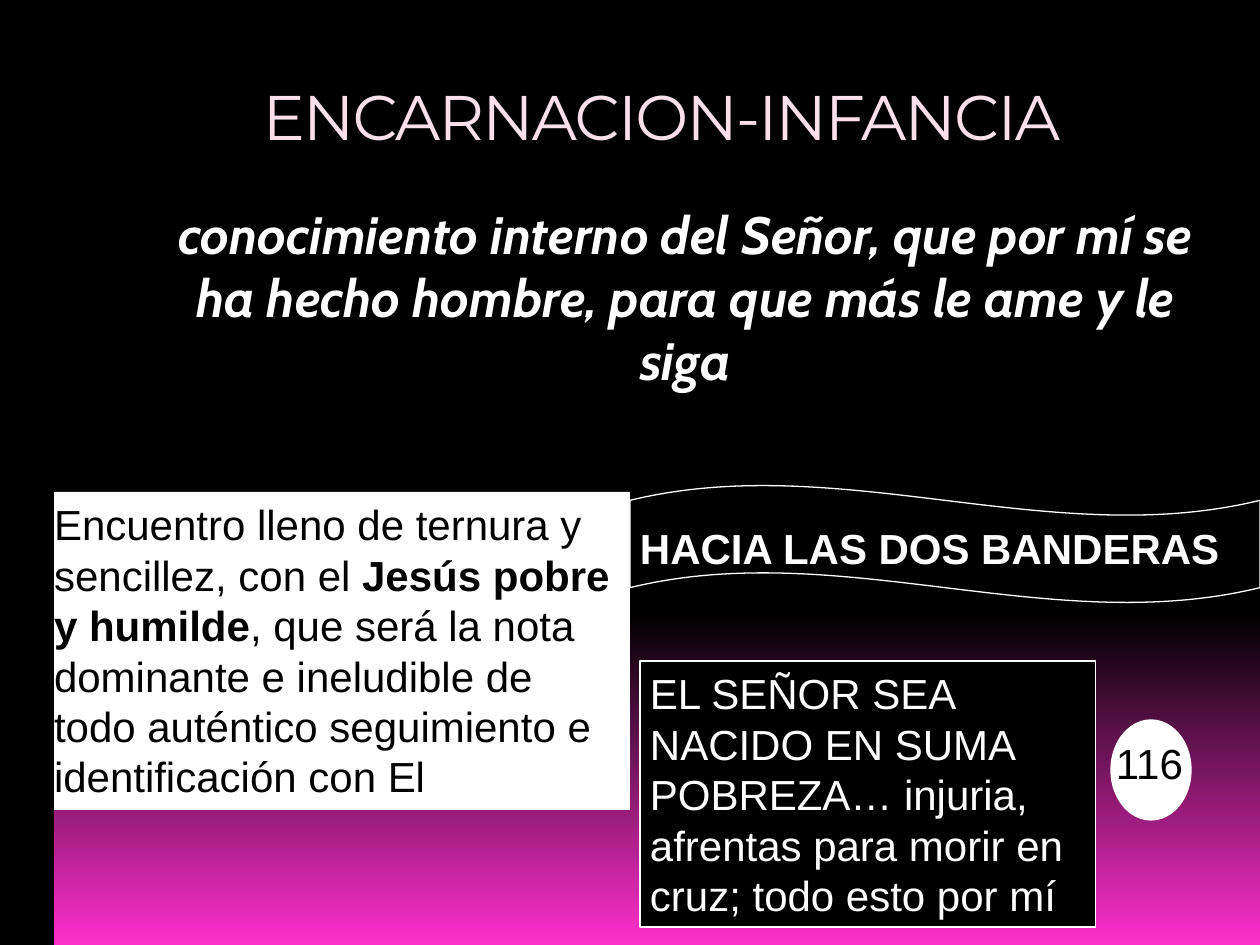
from pptx import Presentation
from pptx import util as u
from pptx.dml.color import RGBColor
from pptx.enum import shapes, text

PX = 914400 // 126
BLACK, WHITE, PINK, ROSE = "000000", "FFFFFF", "FF2FCD", "FBE0EC"
KIND = shapes.MSO_SHAPE

TITLE = "ENCARNACION-INFANCIA"
PRAYER = ("conocimiento interno del Señor, que por mí se ha hecho hombre, "
          "para que más le ame y le siga")
# kind, box in px, fill, line, ink, runs of (words, bold)
PANELS = [
    (KIND.RECTANGLE, (44, 492, 586, 318), WHITE, None, BLACK, [
        ("Encuentro lleno de ternura y sencillez, con el ", False),
        ("Jesús pobre y humilde", True),
        (", que será la nota dominante e ineludible de todo auténtico "
         "seguimiento e identificación con El", False)]),
    (KIND.WAVE, (630, 485, 630, 118), BLACK, WHITE, WHITE,
     [("HACIA LAS DOS BANDERAS", True)]),
    (KIND.RECTANGLE, (640, 661, 456, 266), BLACK, WHITE, WHITE, [
        ("EL SEÑOR SEA NACIDO EN SUMA POBREZA… injuria, afrentas para "
         "morir en cruz; todo esto por mí", False)]),
]
PAGE = "116"
DISC, LABEL = (1111, 720, 80, 100), (1106, 731, 123, 63)
BAR = (0, 0, 54, 945)


def color(code):
    return RGBColor.from_string(code)


def scale(box):
    return [n * PX for n in box]


def draw(home, kind, box, fill, line=None):
    shape = home.add_shape(kind, *scale(box))
    shape.shadow.inherit = False
    shape.fill.solid()
    shape.fill.fore_color.rgb = color(fill)
    if line:
        shape.line.color.rgb = color(line)
        shape.line.width = u.Pt(0.75)
    else:
        shape.line.fill.background()
    return shape


def write(shape, runs, ink, size=24, face="Arial", align=text.PP_ALIGN.LEFT,
          lead=28.8):
    frame = shape.text_frame
    frame.word_wrap = True
    frame.auto_size = text.MSO_AUTO_SIZE.NONE
    frame.vertical_anchor = text.MSO_ANCHOR.TOP
    frame.margin_left = frame.margin_right = 10 * PX
    frame.margin_top = frame.margin_bottom = 7 * PX
    para = frame.paragraphs[0]
    para.alignment = align
    para.space_before = u.Pt(0)
    para.line_spacing = u.Pt(lead) if lead else 1.0
    para.font.name, para.font.size = face, u.Pt(size)
    para.font.color.rgb = color(ink)
    for words, bold in runs:
        run = para.add_run()
        run.text = words
        run.font.bold = bold
    return para


def main():
    deck = Presentation()
    deck.slide_width, deck.slide_height = u.Inches(10), u.Inches(7.5)
    slide = deck.slides.add_slide(deck.slide_layouts[5])
    home = slide.shapes

    back = slide.background.fill
    back.gradient()
    back.gradient_angle = 270
    for stop, place, code in zip(back.gradient_stops, (0.65, 1), (BLACK, PINK)):
        stop.position = place
        stop.color.rgb = color(code)

    title = home.title
    title.left, title.top, title.width, title.height = scale((126, 71, 1071, 126))
    para = write(title, [(TITLE, False)], ROSE, 36, "Montserrat",
                 text.PP_ALIGN.CENTER, None)
    para.runs[0]._r.get_or_add_rPr().set("spc", "-100")

    prayer = home.add_textbox(*scale((164, 195, 1043, 208)))
    para = write(prayer, [(PRAYER, True)], WHITE, 30, "Cabin",
                 text.PP_ALIGN.CENTER, 36)
    para.font.italic = True

    for kind, box, fill, line, ink, runs in PANELS:
        panel = draw(home, kind, box, fill, line)
        if kind == KIND.WAVE:
            panel.adjustments[0] = 0.13
            panel.adjustments[1] = 0
        write(panel, runs, ink)

    badge = home.add_group_shape().shapes
    draw(badge, KIND.OVAL, DISC, WHITE, WHITE)
    write(badge.add_textbox(*scale(LABEL)), [(PAGE, False)], BLACK)

    draw(home, KIND.RECTANGLE, BAR, BLACK)
    deck.save("out.pptx")


if __name__ == "__main__":
    main()
